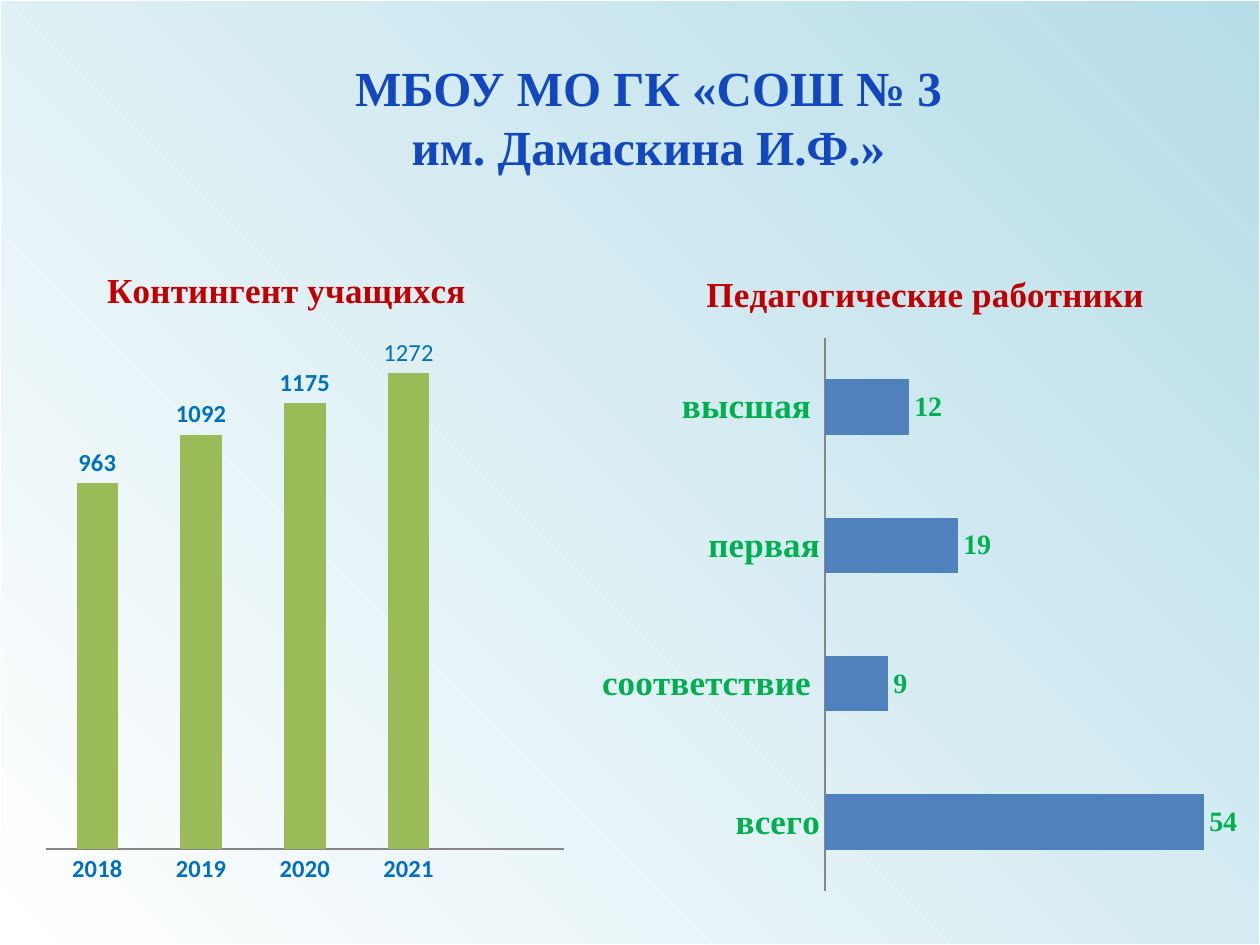
from lxml.etree import SubElement
from pptx import Presentation
from pptx.chart.data import CategoryChartData
from pptx.dml.color import RGBColor
from pptx.enum.chart import XL_CHART_TYPE, XL_LABEL_POSITION, XL_TICK_MARK
from pptx.enum.shapes import MSO_SHAPE
from pptx.enum.text import MSO_ANCHOR, PP_ALIGN
from pptx.oxml.ns import qn
from pptx.util import Inches, Pt


def set_font(font, color, **values):
    font.color.rgb = RGBColor.from_string(color)
    for name, value in values.items():
        setattr(font, name, value)


def set_layout(parent, position, shares):
    """Place a chart part by shares of the chart's width and height."""
    for old_layout in parent.findall(qn("c:layout")):
        parent.remove(old_layout)
    layout = SubElement(parent, qn("c:layout"))
    parent.insert(position, layout)
    manual = SubElement(layout, qn("c:manualLayout"))
    for name, value in shares.items():
        SubElement(manual, qn(f"c:{name}")).set("val", str(value))


presentation = Presentation()
presentation.slide_width, presentation.slide_height = Inches(10), Inches(7.5)
slide = presentation.slides.add_slide(presentation.slide_layouts[5])

# Gradient backdrop behind the title
backdrop = slide.shapes.add_shape(
    MSO_SHAPE.RECTANGLE, 0, 0, presentation.slide_width, presentation.slide_height)
backdrop.shadow.inherit = False
backdrop.fill.gradient()
backdrop.fill.gradient_angle = 45
for stop, color, offset in zip(backdrop.fill.gradient_stops, ("FFFFFF", "B6DDE8"), (0, 1)):
    stop.color.rgb = RGBColor.from_string(color)
    stop.position = offset
backdrop.line.color.rgb = RGBColor.from_string("FFFFFF")
backdrop.line.width = Pt(0.75)

# Title
title = slide.shapes.title
title.element.addprevious(backdrop.element)
title.left, title.top, title.width, title.height = map(Inches, (1.64, 0.3, 7.11, 1.25))
title.text_frame.text = "МБОУ МО ГК «СОШ № 3 \vим. Дамаскина И.Ф.» "
title.text_frame.vertical_anchor = MSO_ANCHOR.MIDDLE
title.text_frame.paragraphs[0].alignment = PP_ALIGN.CENTER
for run in title.text_frame.paragraphs[0].runs:
    set_font(run.font, "1247BE", name="Times New Roman", size=Pt(28), bold=True)

# Charts: pupils by year, teachers by category
charts = [
    {"title": "Контингент учащихся", "type": XL_CHART_TYPE.COLUMN_CLUSTERED,
     "box": (0.23, 1.8, 4.38, 5.55), "maximum": 1400,
     "categories": ("2018", "2019", "2020", "2021", ""),
     "values": (963, 1092, 1175, 1253, None), "fill": "9BBB59",
     "text": "0070C0", "font": "Calibri", "axis_size": 14, "label_size": 14,
     "title_at": (0.13, 0.05), "plot": (0.03, 0.13, 0.94, 0.76)},
    {"title": "Педагогические работники", "type": XL_CHART_TYPE.BAR_CLUSTERED,
     "box": (4.69, 1.95, 5.31, 5.23), "maximum": 60,
     "categories": ("всего", "соответствие ", "первая", "высшая "),
     "values": (54, 9, 19, 12), "fill": "4F81BD",
     "text": "00B050", "font": "Times New Roman", "axis_size": 20, "label_size": 16,
     "title_at": None, "plot": (0.35, 0.14, 0.63, 0.84)},
]
for settings in charts:
    data = CategoryChartData()
    data.categories = settings["categories"]
    data.add_series("Series 1", settings["values"])
    chart = slide.shapes.add_chart(
        settings["type"], *map(Inches, settings["box"]), data).chart
    chart.has_legend = False
    set_font(chart.font, "000000", name="Calibri", size=Pt(10))

    # Chart title and plot area
    chart.chart_title.text_frame.text = settings["title"]
    set_font(chart.chart_title.text_frame.paragraphs[0].runs[0].font, "C00000",
             name="Times New Roman", size=Pt(20), bold=True)
    if settings["title_at"]:
        set_layout(chart.chart_title.element, 1, dict(
            zip(("xMode", "yMode", "x", "y"), ("edge", "edge", *settings["title_at"]))))
    set_layout(chart.element.find(f".//{qn('c:plotArea')}"), 0, dict(
        zip(("layoutTarget", "xMode", "yMode", "x", "y", "w", "h"),
            ("inner", "edge", "edge", *settings["plot"]))))

    # Axes
    chart.value_axis.visible = False
    chart.value_axis.has_major_gridlines = False
    chart.value_axis.minimum_scale = 0
    chart.value_axis.maximum_scale = settings["maximum"]
    axis = chart.category_axis
    axis.major_tick_mark = axis.minor_tick_mark = XL_TICK_MARK.NONE
    axis.format.line.color.rgb = RGBColor.from_string("868686")
    axis.format.line.width = Pt(1)
    set_font(axis.tick_labels.font, settings["text"], name=settings["font"],
             size=Pt(settings["axis_size"]), bold=True)

    # Bars and value labels
    plot = chart.plots[0]
    plot.vary_by_categories = False
    plot.gap_width, plot.overlap = 150, -25
    series = plot.series[0]
    series.format.fill.solid()
    series.format.fill.fore_color.rgb = RGBColor.from_string(settings["fill"])
    labels = series.data_labels
    labels.show_value = True
    labels.position = XL_LABEL_POSITION.OUTSIDE_END
    set_font(labels.font, settings["text"], name=settings["font"],
             size=Pt(settings["label_size"]), bold=True)

    # The last year has its own label text
    if settings["type"] == XL_CHART_TYPE.COLUMN_CLUSTERED:
        label = series.points[3].data_label
        label.text_frame.text = "1272"
        label.position = XL_LABEL_POSITION.OUTSIDE_END
        set_font(label.text_frame.paragraphs[0].runs[0].font, settings["text"],
                 name=settings["font"], size=Pt(settings["label_size"]), bold=False)

presentation.save("out.pptx")
